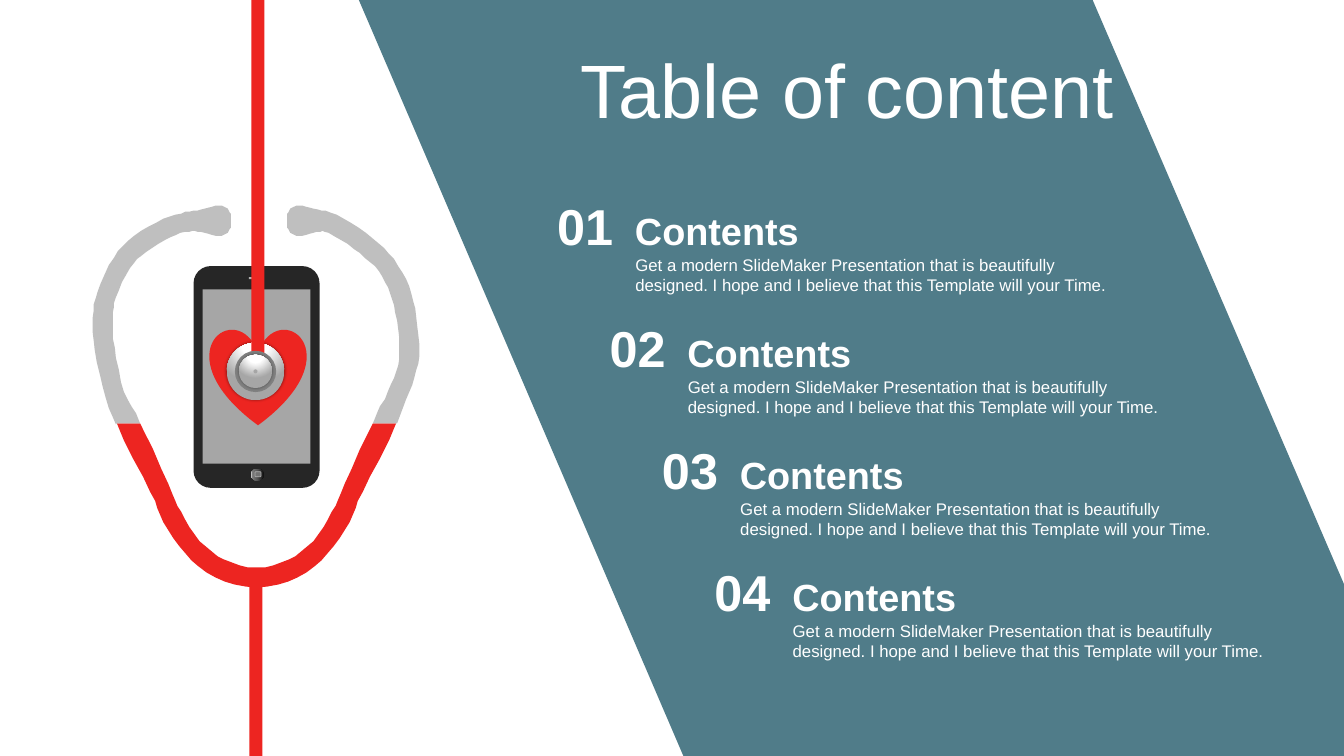
import dataclasses
import math

import lxml.etree
import pptx
import pptx.dml.color
import pptx.enum.shapes
import pptx.enum.text
import pptx.oxml
import pptx.oxml.ns
import pptx.util

RGBColor = pptx.dml.color.RGBColor
SHAPE = pptx.enum.shapes.MSO_SHAPE
ALIGN = pptx.enum.text.PP_ALIGN
ANCHOR = pptx.enum.text.MSO_ANCHOR

TEAL = RGBColor(0x50, 0x7C, 0x89)
RED = RGBColor(0xED, 0x25, 0x21)
WHITE = RGBColor(0xFF, 0xFF, 0xFF)
BLACK = RGBColor(0x00, 0x00, 0x00)
INK = RGBColor(0x0F, 0x0F, 0x0F)
CASE = RGBColor(0x26, 0x26, 0x26)
CHARCOAL = RGBColor(0x59, 0x59, 0x59)
KEY = RGBColor(0x73, 0x73, 0x73)
RING = RGBColor(0x80, 0x80, 0x80)
SCREEN = RGBColor(0xA6, 0xA6, 0xA6)
SPEAKER = RGBColor(0xB0, 0xB0, 0xB0)
SILVER = RGBColor(0xBF, 0xBF, 0xBF)

FONT = "Arial"
GRID_CM = 0.0254
SLANT = 0.43
ENTRY_COUNT = 4
ENTRY_STEP = 121
BODY = ("Get a modern SlideMaker Presentation that is beautifully designed. "
        "I hope and I believe that this Template will your Time.")
METAL = [(0, WHITE), (35, WHITE), (100, SCREEN)]
METAL_PATH = ('<a:path path="circle"><a:fillToRect l="50000" t="-80000" '
              'r="50000" b="180000"/></a:path>')
BUTTON = [(0, INK), (56, CHARCOAL), (91, RING), (100, SILVER)]
BUTTON_PATH = '<a:lin ang="10800000" scaled="0"/>'

AXIS = 254.5
JOINT_Y = 420
JOINT_REACH = 127
JOINT_RADIUS = 11.5
TUBE_RADIUS = 9.7
CURVE_STEPS = 4
HALF_YOKE = [(158, 484), (171, 513), (191, 543), (218, 564)]
YOKE_BOTTOM = (AXIS, 573)
LEFT_ARM = [(114, 392), (104, 346), (102, 315), (106, 292), (121, 261), (139, 242),
            (166, 226), (186, 220)]
RIGHT_ARM = [(394, 392), (404, 365), (406, 341), (402, 308), (394, 281), (379, 258),
             (357, 239), (330, 222)]
EARTIP_Y = 219
EARTIP_PROFILE = [(30, 11), (15, 15), (5, 13), (0, 7)]


@dataclasses.dataclass
class Box:
    left: float
    top: float
    width: float
    height: float

    def inner(self, left, top, width, height):
        return Box(self.left + left, self.top + top, width, height)

    def centred(self, diameter):
        return self.inner((self.width - diameter) / 2, (self.height - diameter) / 2,
                          diameter, diameter)

    def lengths(self):
        return [grid(value) for value in dataclasses.astuple(self)]


def grid(value):
    return pptx.util.Cm(value * GRID_CM)


def finish(shape, color):
    shape.shadow.inherit = False
    shape.line.fill.background()
    if color is not None:
        shape.fill.solid()
        shape.fill.fore_color.rgb = color
    return shape


def add_part(shapes, kind, box, color=None):
    return finish(shapes.add_shape(kind, *box.lengths()), color)


def add_outline(shapes, box, contours, color):
    builder = None
    for start, *rest in contours:
        if builder is None:
            builder = shapes.build_freeform(*start, scale=grid(1))
        else:
            builder.move_to(*start)
        builder.add_line_segments(rest, close=True)
    return finish(builder.convert_to_shape(grid(box.left), grid(box.top)), color)


def spline(stations):
    padded = [stations[0], *stations, stations[-1]]
    samples = []
    for window in zip(padded, padded[1:], padded[2:], padded[3:]):
        for step in range(CURVE_STEPS):
            t = step / CURVE_STEPS
            samples.append([
                b + t * (c - a + t * (2 * a - 5 * b + 4 * c - d + t * (3 * (b - c) + d - a))) / 2
                if t else b for a, b, c, d in zip(*window)])
    return samples + [list(stations[-1])]


def tube_outline(stations):
    samples = spline(stations)
    near_side, far_side = [], []
    for index, (x, y, radius) in enumerate(samples):
        before = samples[max(index - 1, 0)]
        after = samples[min(index + 1, len(samples) - 1)]
        run, rise = after[0] - before[0], after[1] - before[1]
        if y == JOINT_Y:
            run = 0
        length = math.hypot(run, rise)
        across, down = -rise / length * radius, run / length * radius
        near_side.append((x + across, y + down))
        far_side.append((x - across, y - down))
    return near_side + far_side[::-1]


def joint(side):
    return (AXIS + side * JOINT_REACH, JOINT_Y, JOINT_RADIUS)


def with_radius(points):
    return [(x, y, TUBE_RADIUS) for x, y in points]


def yoke_outline():
    mirrored = [(2 * AXIS - x, y) for x, y in reversed(HALF_YOKE)]
    centres = [*HALF_YOKE, YOKE_BOTTOM, *mirrored]
    return tube_outline([joint(-1), *with_radius(centres), joint(1)])


def earpiece_outline(side, arm, tip):
    eartip = [(tip + side * distance, EARTIP_Y, radius) for distance, radius in EARTIP_PROFILE]
    return tube_outline([joint(side), *with_radius(arm), *eartip])


def set_gradient(shape, stops, path):
    marks = "".join(f'<a:gs pos="{place * 1000}"><a:srgbClr val="{color}"/></a:gs>'
                    for place, color in stops)
    namespace = pptx.oxml.ns.nsdecls("a")
    shape.element.spPr.insert(2, pptx.oxml.parse_xml(
        f'<a:gradFill {namespace} rotWithShape="1"><a:gsLst>{marks}</a:gsLst>{path}</a:gradFill>'))


def add_metal_disc(shapes, box):
    disc = add_part(shapes, SHAPE.OVAL, box)
    set_gradient(disc, METAL, METAL_PATH)
    effects = disc.element.spPr.find(pptx.oxml.ns.qn("a:effectLst"))
    shadow = lxml.etree.SubElement(effects, pptx.oxml.ns.qn("a:outerShdw"),
                                   blurRad=str(pptx.util.Pt(2)), dist="0", dir="0")
    tint = lxml.etree.SubElement(shadow, pptx.oxml.ns.qn("a:srgbClr"), val=str(BLACK))
    lxml.etree.SubElement(tint, pptx.oxml.ns.qn("a:alpha"), val="40000")


def add_text(shapes, box, text, size, bold=False, inset=10, align=ALIGN.LEFT,
             anchor=ANCHOR.TOP):
    frame = shapes.add_textbox(*box.lengths()).text_frame
    frame.word_wrap = True
    frame.auto_size = pptx.enum.text.MSO_AUTO_SIZE.SHAPE_TO_FIT_TEXT
    frame.vertical_anchor = anchor
    frame.margin_left = frame.margin_right = grid(inset)
    frame.margin_top = frame.margin_bottom = grid(5)
    para = frame.paragraphs[0]
    para.text = text
    para.alignment = align
    para.font.name = FONT
    para.font.size = pptx.util.Pt(size)
    para.font.bold = bold
    para.font.color.rgb = WHITE


def add_banner(page, box, top_edge):
    right_end = (box.width - top_edge) / SLANT
    corners = [(0, 0), (top_edge, 0), (box.width, right_end), (box.width, box.height),
               (SLANT * box.height, box.height)]
    add_outline(page.shapes, box, [corners], TEAL)


def add_phone(page, box):
    shapes = page.shapes.add_group_shape().shapes
    case = add_part(shapes, SHAPE.ROUNDED_RECTANGLE, box, CASE)
    case.adjustments[0] = 0.136
    add_part(shapes, SHAPE.RECTANGLE, box.inner(55, 11, 13, 2), SPEAKER)
    button = add_part(shapes, SHAPE.OVAL, box.inner(57, 201, 13, 12))
    set_gradient(button, BUTTON, BUTTON_PATH)
    key = add_part(shapes, SHAPE.ROUNDED_RECTANGLE, box.inner(61, 204, 6, 5), KEY)
    key.line.color.rgb = SPEAKER
    key.line.width = pptx.util.Pt(0.5)
    add_part(shapes, SHAPE.RECTANGLE, box.inner(9, 23, 107, 173), SCREEN)


def add_chestpiece_cap(page, box):
    shapes = page.shapes.add_group_shape().shapes
    add_part(shapes, SHAPE.OVAL, box.centred(41), RING)
    add_metal_disc(shapes, box.centred(33))
    add_part(shapes, SHAPE.OVAL, box.centred(4), SCREEN)


def add_stethoscope(page, box):
    shapes = page.shapes
    chestpiece = box.inner(225, 340, 57, 57)
    earpieces = [earpiece_outline(1, RIGHT_ARM, 285), earpiece_outline(-1, LEFT_ARM, 229)]
    add_phone(page, box.inner(192, 264, 125, 220))
    add_part(shapes, SHAPE.HEART, box.inner(208, 326, 96, 96), RED)
    add_part(shapes, SHAPE.RECTANGLE, box.inner(247.5, 570, 13, 180), RED)
    add_metal_disc(shapes, chestpiece)
    add_outline(shapes, box, [yoke_outline()], RED)
    add_outline(shapes, box, earpieces, SILVER)
    add_part(shapes, SHAPE.RECTANGLE, box.inner(249.5, 0, 13, 358), RED)
    add_chestpiece_cap(page, chestpiece)


def add_entry(page, box, number):
    shapes = page.shapes.add_group_shape().shapes
    add_text(shapes, box.inner(92.5, 59, 493, 50), BODY, 12)
    add_text(shapes, box.inner(90, 12, 493, 56), "Contents", 27, bold=True, inset=12)
    add_text(shapes, box.inner(0, 0, 105, 71), f"{number:02}", 36, bold=True, inset=12,
             align=ALIGN.CENTER)


def add_contents(page, box):
    add_text(page.shapes, box.inner(38, 0, 659, 101), "Table of content", 54,
             anchor=ANCHOR.MIDDLE)
    for index in range(ENTRY_COUNT):
        drop = index * ENTRY_STEP
        add_entry(page, box.inner(SLANT * drop, 152 + drop, 586, 109), index + 1)


def main():
    deck = pptx.Presentation()
    deck.slide_width = grid(1333.33)
    deck.slide_height = grid(750)
    page = deck.slides.add_slide(deck.slide_layouts[6])
    add_banner(page, Box(356, 0, 978, 750), top_edge=728)
    add_stethoscope(page, Box(0, 0, 436, 750))
    add_contents(page, Box(528, 37, 741, 624))
    deck.save("out.pptx")


if __name__ == "__main__":
    main()
